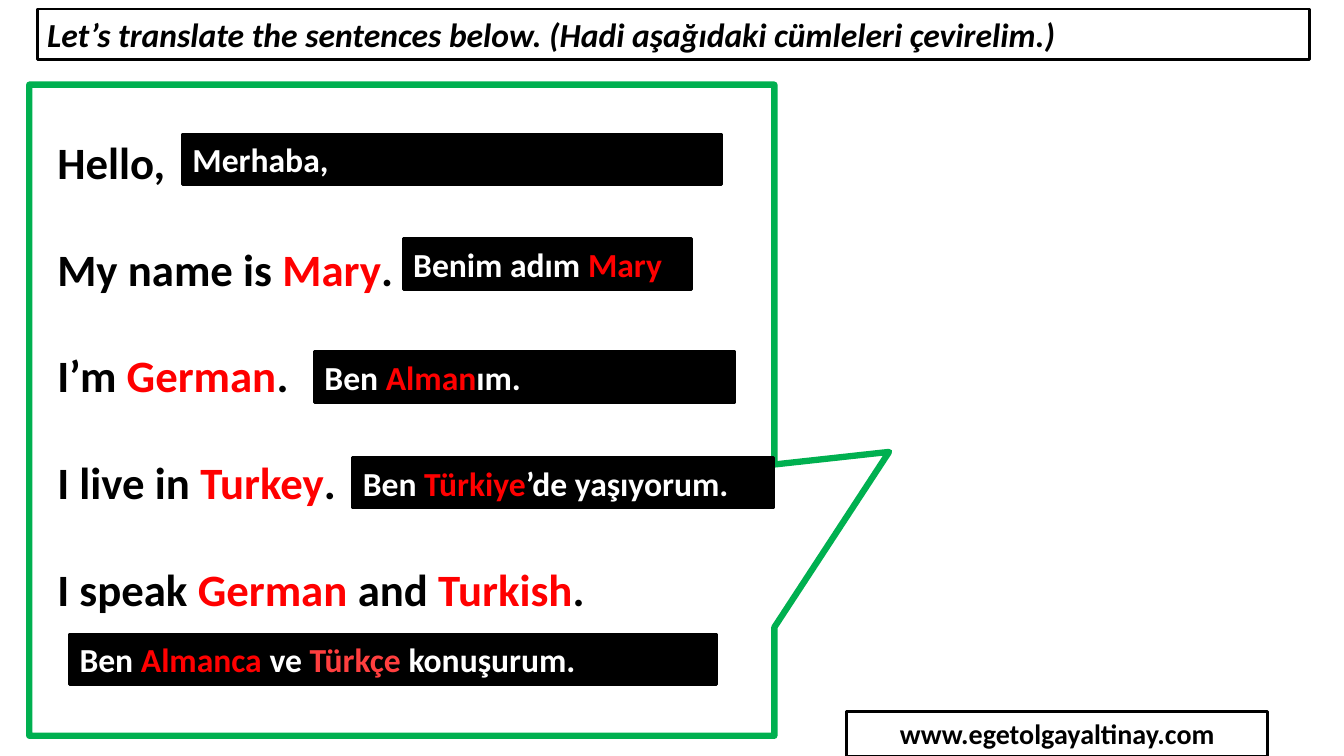
import dataclasses

import pptx
import pptx.dml.color
import pptx.enum.shapes
import pptx.enum.text
import pptx.util

Inches = pptx.util.Inches
Pt = pptx.util.Pt
COLORS = {"black": "000000", "white": "FFFFFF", "red": "FF0000",
          "light red": "FF3F3F", "green": "00B050"}


@dataclasses.dataclass(frozen=True)
class Run:
    text: str
    color: str = "red"


@dataclasses.dataclass(frozen=True)
class Label:
    left: float
    top: float
    width: float
    runs: tuple[Run, ...]
    height: float = 0.5
    fill: str = "black"
    size: int = 24
    italic: bool = False
    centered: bool = False


def black(text: str) -> Run:
    return Run(text, "black")


def white(text: str) -> Run:
    return Run(text, "white")


SENTENCES = (
    (black("Hello,"),),
    (black("My name is "), Run("Mary"), black(".")),
    (black("I’m "), Run("German"), black(".")),
    (black("I live in "), Run("Turkey"), black(".")),
    (black("I speak "), Run("German"), black(" and "), Run("Turkish"), black(".")),
)
LABELS = (
    Label(0.37, 0.09, 12.62,
          (black("Let’s translate the sentences below. (Hadi aşağıdaki cümleleri çevirelim.)"),),
          fill="white", italic=True),
    Label(1.81, 1.33, 5.35, (white("Merhaba,"),)),
    Label(4, 2.37, 2.86, (white("Benim adım "), Run("Mary"))),
    Label(3.12, 3.49, 4.17, (white("Ben "), Run("Alman"), white("ım."))),
    Label(3.5, 4.54, 4.17, (white("Ben "), Run("Türkiye"), white("’de yaşıyorum."))),
    Label(0.69, 6.29, 6.42, (white("Ben "), Run("Almanca"), white(" ve "),
                             Run("Türkçe", "light red"), white(" konuşurum."))),
    Label(8.4, 7.06, 4.17, (black("www.egetolgayaltinay.com"),),
          height=0.44, fill="white", size=20, centered=True),
)


def rgb(name: str) -> pptx.dml.color.RGBColor:
    return pptx.dml.color.RGBColor.from_string(COLORS[name])


def add_runs(paragraph, runs: tuple[Run, ...], size: int, italic: bool = False) -> None:
    for item in runs:
        run = paragraph.add_run()
        run.text = item.text
        run.font.name = "Calibri"
        run.font.size = Pt(size)
        run.font.bold = True
        run.font.italic = italic
        run.font.color.rgb = rgb(item.color)


def add_box(slide, kind, left: float, top: float, width: float, height: float,
            fill: str, line: str, line_width: float):
    shape = slide.shapes.add_shape(kind, Inches(left), Inches(top),
                                   Inches(width), Inches(height))
    shape.shadow.inherit = False
    shape.fill.solid()
    shape.fill.fore_color.rgb = rgb(fill)
    shape.line.color.rgb = rgb(line)
    shape.line.width = Pt(line_width)
    return shape


def add_speech_bubble(slide) -> None:
    bubble = add_box(slide, pptx.enum.shapes.MSO_SHAPE.RECTANGULAR_CALLOUT,
                     0.29, 0.84, 7.39, 6.46, "white", "green", 4.5)
    bubble.adjustments[0] = 0.654
    bubble.adjustments[1] = 0.064


def add_sentences(slide) -> None:
    box = slide.shapes.add_textbox(Inches(0.47), Inches(1.29), Inches(6.38), Inches(5.49))
    frame = box.text_frame
    frame.word_wrap = True
    for index, runs in enumerate(SENTENCES):
        paragraph = frame.add_paragraph() if index else frame.paragraphs[0]
        paragraph.space_after = Pt(37.7)
        add_runs(paragraph, runs, 32)


def add_label(slide, label: Label) -> None:
    shape = add_box(slide, pptx.enum.shapes.MSO_SHAPE.RECTANGLE, label.left, label.top,
                    label.width, label.height, label.fill, "black", 2)
    frame = shape.text_frame
    frame.word_wrap = True
    frame.vertical_anchor = pptx.enum.text.MSO_ANCHOR.TOP
    alignment = pptx.enum.text.PP_ALIGN
    paragraph = frame.paragraphs[0]
    paragraph.alignment = alignment.CENTER if label.centered else alignment.LEFT
    add_runs(paragraph, label.runs, label.size, label.italic)


def main() -> None:
    """Build the translation exercise slide."""
    presentation = pptx.Presentation()
    presentation.slide_width = Inches(13.33)
    presentation.slide_height = Inches(7.5)
    slide = presentation.slides.add_slide(presentation.slide_layouts[6])
    add_speech_bubble(slide)
    add_sentences(slide)
    for label in LABELS:
        add_label(slide, label)
    presentation.save("out.pptx")


if __name__ == "__main__":
    main()
